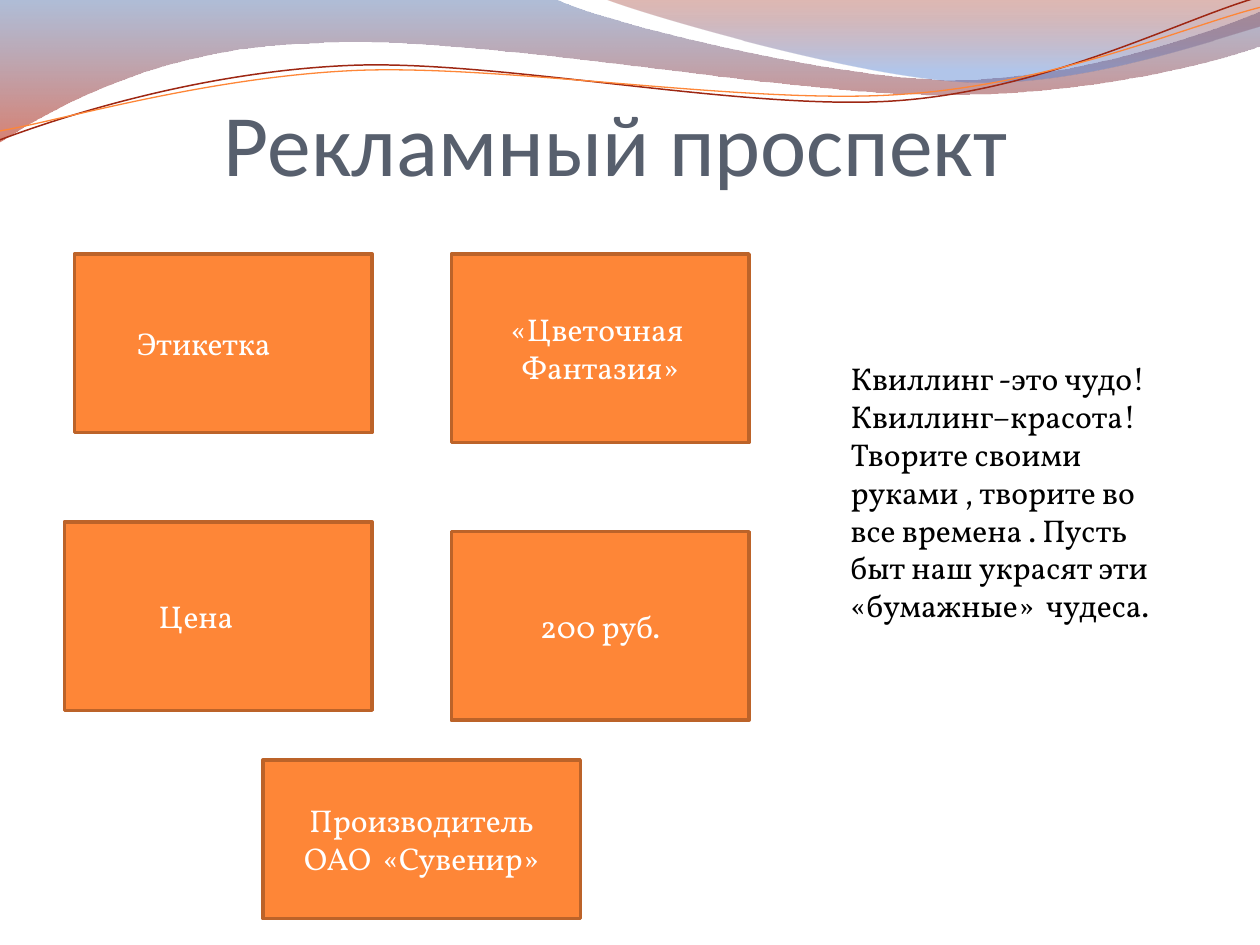
"""Build the «Рекламный проспект» slide with its wave header and labelled boxes."""
import pptx
import pptx.dml.color
import pptx.enum.shapes
import pptx.enum.text
import pptx.oxml
import pptx.util
import lxml.etree

Cm, Pt, qn = pptx.util.Cm, pptx.util.Pt, pptx.oxml.ns.qn
ALIGN, ANCHOR = pptx.enum.text.PP_ALIGN, pptx.enum.text.MSO_ANCHOR


def rgb(code):
    return pptx.dml.color.RGBColor.from_string(code)


def add_wave(shapes, start, segments, close):
    points = [(Cm(seg[i]), Cm(seg[i + 1])) for seg in segments for i in range(0, len(seg), 2)]
    builder = shapes.build_freeform(Cm(start[0]), Cm(start[1]), scale=1.0)
    builder.add_line_segments(points, close=close)
    sp = builder.convert_to_shape()
    sp.shadow.inherit = False
    lines = iter(list(sp.element.spPr.iter(qn("a:lnTo"))))
    for seg in segments:
        parts = [next(lines) for _ in range(len(seg) // 2)]
        if len(parts) == 3:
            parts[0].addprevious(curve := lxml.etree.Element(qn("a:cubicBezTo")))
            for part in parts:
                curve.append(part[0])
                part.getparent().remove(part)
    return sp


prs = pptx.Presentation()
prs.slide_width, prs.slide_height = Cm(25.4), Cm(19.05)
s = prs.slides.add_slide(prs.slide_layouts[5])

bands = [
    ((0, 0), [(11.18, -0.03), (12.09, 0.43, 16.87, 1.6, 19.25, 1.6),
              (21.67, 1.6, 24.33, 0.66, 25.4, 0.23), (25.43, 0.91),
              (24.97, 1.12, 22.1, 1.93, 18.95, 1.91),
              (15.8, 1.91, 9.7, 0.71, 6.53, 0.86),
              (3.28, 0.91, 1.17, 2.11, -0.03, 2.87)],
     [(0, "4F6EA8", 45), (1, "B61A00", 55)]),
    ((12.17, -0.03), [(12.93, 0.28, 17.32, 1.57, 19.53, 1.65),
                      (21.74, 1.75, 24.41, 0.81, 25.4, 0.53), (25.4, 0)],
     [(0, "951500", 30), (0.8, "5681D1", 45)]),
]
for start, segments, stops in bands:
    sp = add_wave(s.shapes, start, segments, True)
    sp.line.fill.background()
    sp.fill.gradient()
    sp.fill.gradient_angle = 270
    for stop, (position, colour, opacity) in zip(sp.fill.gradient_stops, stops):
        stop.position = position
        stop.color.rgb = rgb(colour)
    colours = sp.element.spPr.iter(qn("a:srgbClr"))
    for clr, (position, colour, opacity) in zip(list(colours), stops):
        alpha = lxml.etree.SubElement(clr, qn("a:alpha"))
        alpha.set("val", str(opacity * 1000))

strands = [
    ((0, 2.82), [(1.22, 2.36, 4.01, 1.45, 7.04, 1.32),
                 (10.03, 1.19, 15.06, 2.26, 18.11, 2.03),
                 (21.16, 1.8, 23.83, 0.38, 25.35, -0.05)], "9E2713", 0.85),
    ((0, 2.64), [(1.19, 2.44, 4.17, 1.55, 7.19, 1.42),
                 (10.24, 1.3, 15.16, 2.13, 18.21, 1.9),
                 (21.23, 1.7, 23.9, 0.53, 25.4, 0.15)], "FE8637", 0.75),
]
for start, segments, colour, width in strands:
    sp = add_wave(s.shapes, start, segments, False)
    sp.fill.background()
    sp.line.color.rgb = rgb(colour)
    sp.line.width = Pt(width)

title = s.shapes.title
title.left, title.top, title.width, title.height = Cm(1.09), Cm(0.74), Cm(23.06), Cm(3.18)
tf = title.text_frame
tf.text = "Рекламный проспект "
tf.auto_size = pptx.enum.text.MSO_AUTO_SIZE.NONE
tf.vertical_anchor = ANCHOR.BOTTOM
tf.margin_left = tf.margin_right = tf.margin_bottom = 0
p = tf.paragraphs[0]
p.alignment = ALIGN.CENTER
p.font.size, p.font.name = Pt(50), "Calibri"
p.font.color.rgb = rgb("575F6D")

boxes = [
    ("Этикетка", 1.5, 5.12, 6, 3.6, 1.26),
    ("«Цветочная \nФантазия»", 9.1, 5.12, 6, 3.8, None),
    ("Цена", 1.3, 10.52, 6.2, 3.8, 1.9),
    ("200 руб.", 9.1, 10.72, 6, 3.8, None),
    ("Производитель ОАО  «Сувенир»", 5.3, 15.32, 6.4, 3.2, None),
]
for text, x, y, w, h, inset in boxes:
    sp = s.shapes.add_shape(pptx.enum.shapes.MSO_SHAPE.RECTANGLE, Cm(x), Cm(y), Cm(w), Cm(h))
    sp.shadow.inherit = False
    sp.fill.solid()
    sp.fill.fore_color.rgb = rgb("FE8637")
    sp.line.color.rgb = rgb("BC6329")
    sp.line.width = Pt(2)
    tf = sp.text_frame
    tf.text = text
    tf.word_wrap = True
    tf.vertical_anchor = ANCHOR.MIDDLE
    if inset:
        tf.margin_left = Cm(inset)
    for p in tf.paragraphs:
        p.alignment = ALIGN.LEFT if inset else ALIGN.CENTER
        p.font.size, p.font.name = Pt(18), "Vollkorn"
        p.font.color.rgb = rgb("FFFFFF")

tf = s.shapes.add_textbox(Cm(16.9), Cm(7.12), Cm(6.8), Cm(5.64)).text_frame
tf.word_wrap = True
tf.auto_size = pptx.enum.text.MSO_AUTO_SIZE.SHAPE_TO_FIT_TEXT
tf.text = ("Квиллинг -это чудо! Квиллинг–красота!  Творите своими руками , творите во "
           "все времена . Пусть быт наш украсят эти  «бумажные»  чудеса.")
p = tf.paragraphs[0]
p.font.size, p.font.name = Pt(18), "Vollkorn"
p.font.color.rgb = rgb("000000")

prs.save("out.pptx")
